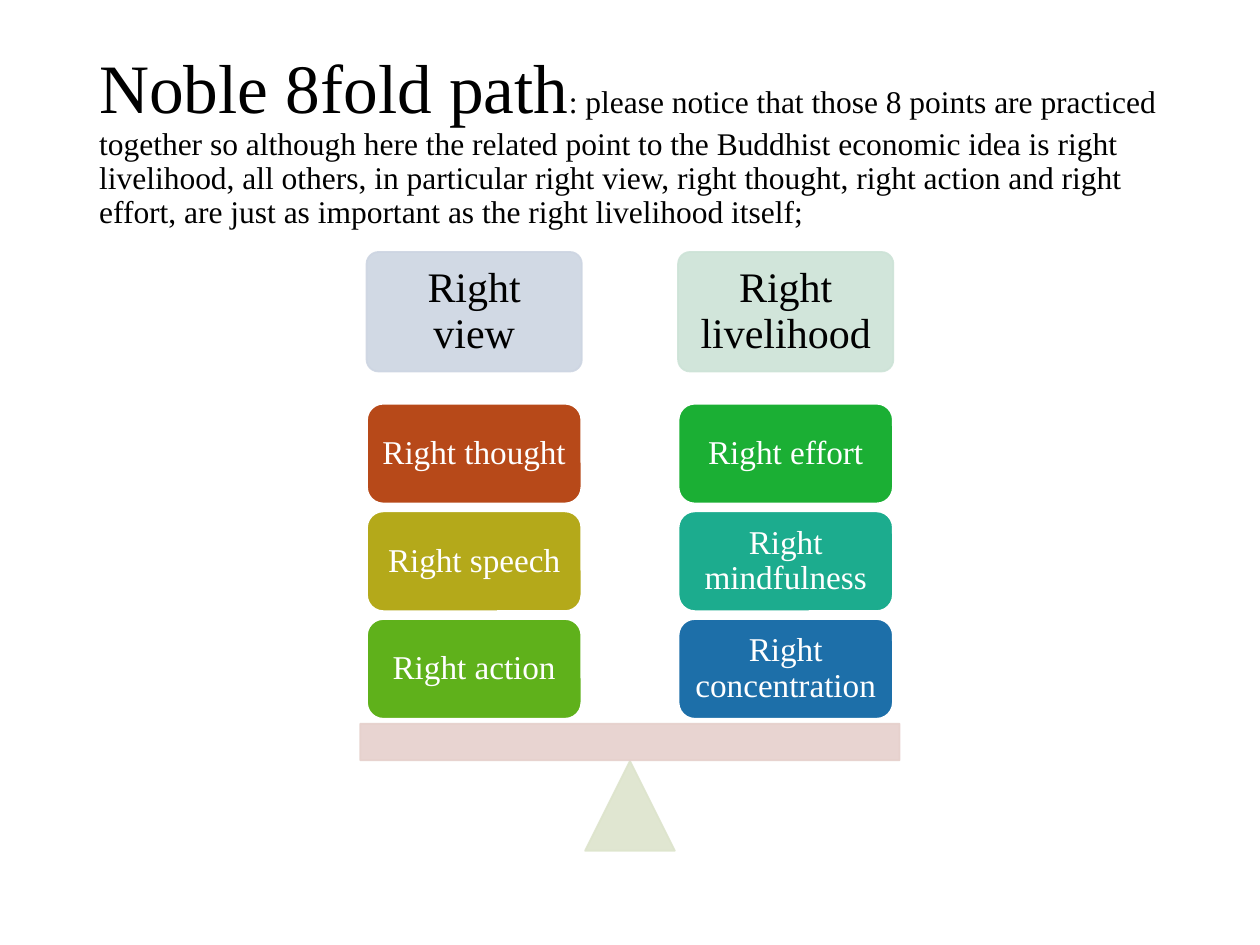
from dataclasses import dataclass

from lxml.etree import SubElement
from pptx import Presentation
from pptx.dml.color import RGBColor
from pptx.enum.shapes import MSO_SHAPE
from pptx.enum.text import MSO_ANCHOR, PP_ALIGN
from pptx.oxml.ns import qn
from pptx.util import Cm, Pt

FONT = "Times New Roman"
CENTER = 12.7
BOX_W = 4.34
HEAD_TOP, HEAD_H = 5.08, 2.41
STEP_TOP, STEP_H, STEP_PITCH = 8.13, 2.03, 2.17
TITLE = "Noble 8fold path"
REMARK = (
    ": please notice that those 8 points are practiced together so although "
    "here the related point to the Buddhist economic idea is right livelihood, "
    "all others, in particular right view, right thought, right action and "
    "right effort, are just as important as the right livelihood itself;"
)


@dataclass
class Step:
    text: str
    color: str


@dataclass
class Pan:
    left: float
    head: Step
    steps: list[Step]


PANS = [
    Pan(7.39, Step("Right view", "CDD5E2"), [
        Step("Right thought", "B74919"),
        Step("Right speech", "B4A91A"),
        Step("Right action", "5FB11B"),
    ]),
    Pan(13.67, Step("Right livelihood", "CDE3D7"), [
        Step("Right effort", "1BAF34"),
        Step("Right mindfulness", "1CAC8E"),
        Step("Right concentration", "1D6FA9"),
    ]),
]


def rgb(value: str) -> RGBColor:
    return RGBColor.from_string(value)


def add_block(s, kind, left: float, top: float, width: float, height: float,
              fill: str, line: str, line_width: float):
    sp = s.shapes.add_shape(kind, Cm(left), Cm(top), Cm(width), Cm(height))
    sp.shadow.inherit = False
    sp.fill.solid()
    sp.fill.fore_color.rgb = rgb(fill)
    sp.line.color.rgb = rgb(line)
    sp.line.width = Pt(line_width)
    return sp


def add_pale_block(s, kind, left: float, top: float, width: float,
                   height: float, color: str):
    """Draw a block whose fill and outline are 90% opaque."""
    sp = add_block(s, kind, left, top, width, height, color, color, 1)
    for clr in sp._element.spPr.iter(qn("a:srgbClr")):
        SubElement(clr, qn("a:alpha"), val="90000")
    return sp


def add_label(sp, text: str, size: float, color: str, inset: float) -> None:
    tf = sp.text_frame
    tf.word_wrap = True
    tf.vertical_anchor = MSO_ANCHOR.MIDDLE
    tf.margin_left = tf.margin_right = Cm(inset)
    tf.margin_top = tf.margin_bottom = Cm(inset)
    p = tf.paragraphs[0]
    p.text = text
    p.alignment = PP_ALIGN.CENTER
    p.line_spacing = 0.9
    p.font.name = FONT
    p.font.size = Pt(size)
    p.font.color.rgb = rgb(color)


def add_title(s) -> None:
    tf = s.shapes.add_textbox(Cm(1.75), Cm(1.02), Cm(21.9), Cm(3.68)).text_frame
    tf.word_wrap = True
    tf.vertical_anchor = MSO_ANCHOR.MIDDLE
    p = tf.paragraphs[0]
    p.line_spacing = 0.9
    p.font.name = FONT
    p.font.color.rgb = rgb("000000")
    for text, size in ((TITLE, 39.6), (REMARK, 18)):
        r = p.add_run()
        r.text = text
        r.font.size = Pt(size)


def add_pan(s, pan: Pan) -> None:
    """Draw one side of the scale: its heading and the steps below."""
    head = add_pale_block(s, MSO_SHAPE.ROUNDED_RECTANGLE, pan.left, HEAD_TOP,
                          BOX_W, HEAD_H, pan.head.color)
    head.adjustments[0] = 0.1
    add_label(head, pan.head.text, 24, "000000", 0.26)
    for i, step in enumerate(pan.steps):
        sp = add_block(s, MSO_SHAPE.ROUNDED_RECTANGLE, pan.left,
                       STEP_TOP + i * STEP_PITCH, BOX_W, STEP_H,
                       step.color, "FFFFFF", 1.5)
        add_label(sp, step.text, 19, "FFFFFF", 0.2)


def add_balance(s) -> None:
    pivot, beam = 1.81, 10.87
    add_pale_block(s, MSO_SHAPE.ISOSCELES_TRIANGLE, CENTER - pivot / 2, 15.34,
                   pivot, pivot, "DDE4CC")
    add_pale_block(s, MSO_SHAPE.RECTANGLE, CENTER - beam / 2, 14.59,
                   beam, 0.74, "E6D0CC")


def main() -> None:
    prs = Presentation()
    prs.slide_width, prs.slide_height = Cm(25.4), Cm(19.05)
    s = prs.slides.add_slide(prs.slide_layouts[6])
    add_title(s)
    add_balance(s)
    for pan in PANS:
        add_pan(s, pan)
    prs.save("out.pptx")


if __name__ == "__main__":
    main()
